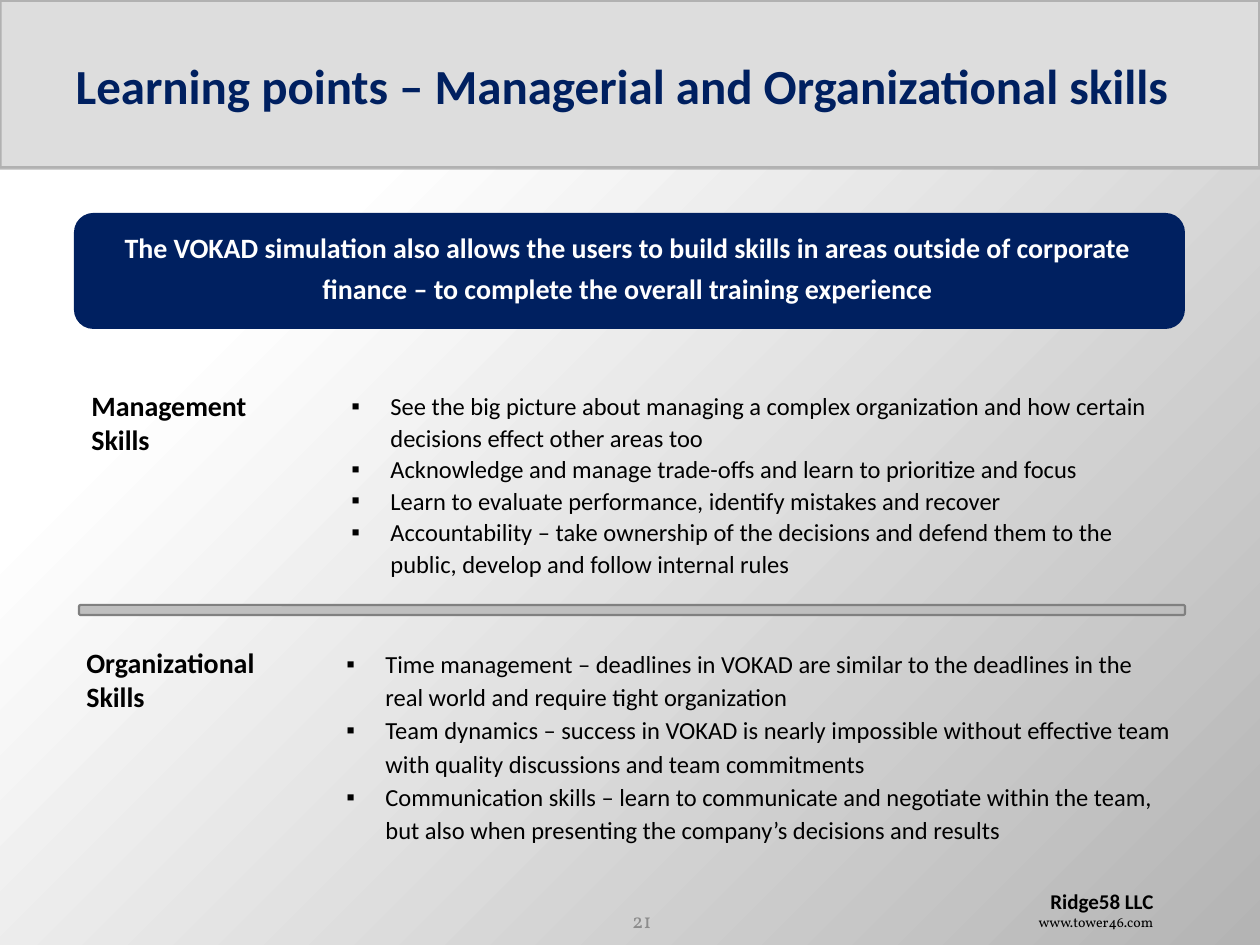
from dataclasses import dataclass

from lxml import etree
from pptx import Presentation
from pptx.dml.color import RGBColor
from pptx.enum.shapes import MSO_SHAPE
from pptx.enum.text import MSO_ANCHOR, MSO_AUTO_SIZE, PP_ALIGN
from pptx.oxml import parse_xml
from pptx.oxml.ns import nsdecls, qn
from pptx.util import Pt

RECT, ROUNDED = MSO_SHAPE.RECTANGLE, MSO_SHAPE.ROUNDED_RECTANGLE
LEFT, CENTER, RIGHT = PP_ALIGN.LEFT, PP_ALIGN.CENTER, PP_ALIGN.RIGHT
TOP, MIDDLE = MSO_ANCHOR.TOP, MSO_ANCHOR.MIDDLE

TITLE = "Learning points – Managerial and Organizational skills"
BANNER = ("The VOKAD simulation also allows the users to build skills in areas outside "
          "of corporate finance – to complete the overall training experience")
SECTIONS = [
    {
        "label": ["Management", "Skills"],
        "label_box": (79, 383, 328, 81),
        "points": [
            "See the big picture about managing a complex organization and how certain "
            "decisions effect other areas too",
            "Acknowledge and manage trade-offs and learn to prioritize and focus",
            "Learn to evaluate performance, identify mistakes and recover",
            "Accountability – take ownership of the decisions and defend them to the "
            "public, develop and follow internal rules",
        ],
        "points_box": (339, 383, 825, 242),
        "leading": 18,
    },
    {
        "label": ["Organizational", "Skills"],
        "label_box": (74, 640, 328, 79),
        "points": [
            "Time management – deadlines in VOKAD are similar to the deadlines in the "
            "real world and require tight organization",
            "Team dynamics – success in VOKAD is nearly impossible without effective "
            "team with quality discussions and team commitments",
            "Communication skills – learn to communicate and negotiate within the team, "
            "but also when presenting the company’s decisions and results",
        ],
        "points_box": (334, 639, 852, 252),
        "leading": 19,
    },
]
COMPANY, WEBSITE = "Ridge58 LLC", "www.tower46.com"
PAGE_NUMBER = "21"


@dataclass(frozen=True)
class Style:
    font: str
    size: int
    color: str
    bold: bool = False


class Theme:
    navy, header, header_line = "002060", "DDDDDD", "A6A6A6"
    divider, divider_line = "BFBFBF", "808080"
    backdrop_start, backdrop_end = "FFFFFF", "B4B4B4"
    title = Style("Calibri", 28, navy, True)
    banner = Style("Calibri", 16, "FFFFFF", True)
    label = Style("Calibri", 16, "000000", True)
    point = Style("Calibri", 14, "000000")
    company = Style("Calibri", 12, "000000", True)
    website = Style("Vollkorn", 8, "000000")
    number = Style("Vollkorn", 12, "8C8C8C")


def px(value):
    return round(value * 914400 / 126)


def place(shape, box):
    shape.left, shape.top, shape.width, shape.height = map(px, box)


def add_panel(slide, kind, box, fill, line=None, line_width=0):
    panel = slide.shapes.add_shape(kind, *map(px, box))
    panel.shadow.inherit = False
    panel.fill.solid()
    panel.fill.fore_color.rgb = RGBColor.from_string(fill)
    if line:
        panel.line.color.rgb = RGBColor.from_string(line)
        panel.line.width = Pt(line_width)
    else:
        panel.line.fill.background()
    return panel


def add_bullet(paragraph):
    properties = paragraph._p.get_or_add_pPr()
    properties.set("marL", str(px(39)))
    properties.set("indent", str(-px(39)))
    etree.SubElement(properties, qn("a:buFont")).set("typeface", "Arial")
    etree.SubElement(properties, qn("a:buChar")).set("char", "▪")


def write(frame, lines, align=LEFT, anchor=TOP, leading=None, bullets=False):
    frame.word_wrap = True
    frame.auto_size = MSO_AUTO_SIZE.NONE
    frame.vertical_anchor = anchor
    for index, (text, style) in enumerate(lines):
        paragraph = frame.add_paragraph() if index else frame.paragraphs[0]
        paragraph.text = text
        paragraph.alignment = align
        if leading:
            paragraph.line_spacing = Pt(leading)
        if bullets:
            add_bullet(paragraph)
        font = paragraph.font
        font.name, font.size, font.bold = style.font, Pt(style.size), style.bold
        font.color.rgb = RGBColor.from_string(style.color)


def add_text(slide, box, lines, **options):
    write(slide.shapes.add_textbox(*map(px, box)).text_frame, lines, **options)


def paint_backdrop(slide):
    slide.background.fill.solid()
    solid = slide._element.find(".//" + qn("a:solidFill"))
    gradient = parse_xml(
        f'<a:gradFill {nsdecls("a")} rotWithShape="1"><a:gsLst>'
        f'<a:gs pos="24000"><a:srgbClr val="{Theme.backdrop_start}"/></a:gs>'
        f'<a:gs pos="100000"><a:srgbClr val="{Theme.backdrop_end}"/></a:gs></a:gsLst>'
        '<a:path path="circle"><a:fillToRect r="100000" b="100000"/></a:path></a:gradFill>')
    solid.getparent().replace(solid, gradient)


def main():
    deck = Presentation()
    deck.slide_width, deck.slide_height = px(1260), px(945)
    slide = deck.slides.add_slide(deck.slide_layouts[5])
    paint_backdrop(slide)

    header = add_panel(slide, RECT, (0, 0, 1260, 168), Theme.header, Theme.header_line, 2)
    line_color = header.line._ln.find(".//" + qn("a:srgbClr"))
    etree.SubElement(line_color, qn("a:alpha")).set("val", "78000")
    title = slide.shapes.title
    header._element.addnext(title._element)
    place(title, (63, 6, 1134, 158))
    write(title.text_frame, [(TITLE, Theme.title)], anchor=MIDDLE)

    add_panel(slide, ROUNDED, (74, 213, 1111, 116), Theme.navy)
    add_text(slide, (96, 218, 1063, 94), [(BANNER, Theme.banner)], align=CENTER, leading=23)

    for section in SECTIONS:
        add_text(slide, section["label_box"],
                 [(text, Theme.label) for text in section["label"]], leading=19)
        add_text(slide, section["points_box"],
                 [(text, Theme.point) for text in section["points"]],
                 leading=section["leading"], bullets=True)
    add_panel(slide, ROUNDED, (79, 605, 1106, 10), Theme.divider, Theme.divider_line, 1.25)

    add_text(slide, (1008, 882, 158, 55),
             [(COMPANY, Theme.company), (WEBSITE, Theme.website)], align=RIGHT)
    add_text(slide, (596, 895, 68, 50), [(PAGE_NUMBER, Theme.number)],
             align=RIGHT, anchor=MIDDLE)
    deck.save("out.pptx")


if __name__ == "__main__":
    main()
